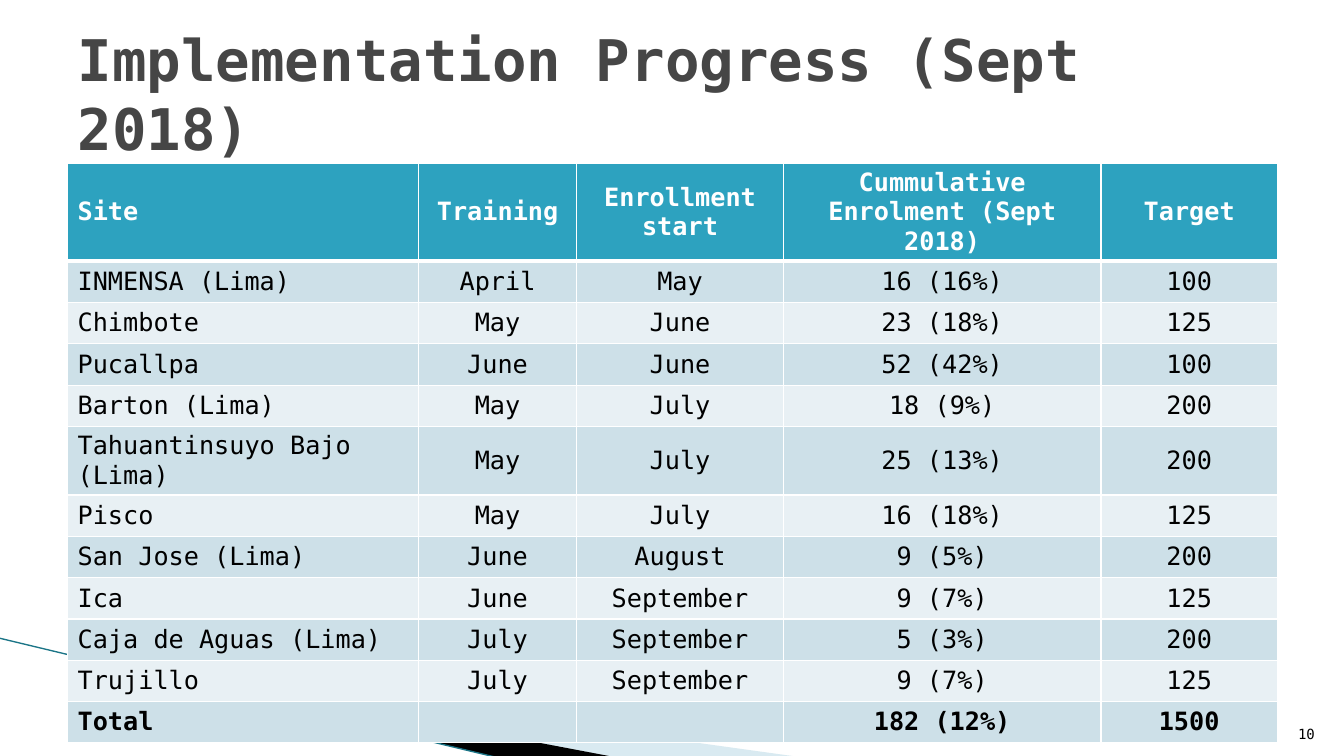
from lxml import etree
from pptx import Presentation
from pptx.dml.color import RGBColor
from pptx.enum.shapes import MSO_CONNECTOR
from pptx.enum.text import MSO_ANCHOR, MSO_AUTO_SIZE, PP_ALIGN
from pptx.oxml.ns import qn
from pptx.util import Inches, Pt

STRAIGHT = MSO_CONNECTOR.STRAIGHT
MIDDLE, BOTTOM = MSO_ANCHOR.MIDDLE, MSO_ANCHOR.BOTTOM
LEFT, CENTER, RIGHT = PP_ALIGN.LEFT, PP_ALIGN.CENTER, PP_ALIGN.RIGHT
NO_AUTOFIT = MSO_AUTO_SIZE.NONE

FONT = "DejaVu Sans Mono"
WHITE = RGBColor(0xFF, 0xFF, 0xFF)
BLACK = RGBColor(0, 0, 0)
TITLE_GREY = RGBColor(0x46, 0x46, 0x46)
HEADER_TEAL = RGBColor(0x2D, 0xA2, 0xBF)
BAND_DARK = RGBColor(0xCD, 0xE0, 0xE8)
BAND_LIGHT = RGBColor(0xE8, 0xF0, 0xF4)
SWOOSH_BLUE = RGBColor(0xA0, 0xCB, 0xDC)
SWOOSH_LINE = RGBColor(0x1B, 0x75, 0x87)

COLUMN_WIDTHS = [3.48, 1.57, 2.05, 3.15, 1.75]
ROW_HEIGHT = 0.41
PROGRESS = [
    ("Site", "Training", "Enrollment start", "Cummulative Enrolment (Sept 2018)", "Target"),
    ("INMENSA (Lima)", "April", "May", "16 (16%)", "100"),
    ("Chimbote", "May", "June", "23 (18%)", "125"),
    ("Pucallpa", "June", "June", "52 (42%)", "100"),
    ("Barton (Lima)", "May", "July", "18 (9%)", "200"),
    ("Tahuantinsuyo Bajo (Lima)", "May", "July", "25 (13%)", "200"),
    ("Pisco", "May", "July", "16 (18%)", "125"),
    ("San Jose (Lima)", "June", "August", "9 (5%)", "200"),
    ("Ica", "June", "September", "9 (7%)", "125"),
    ("Caja de Aguas (Lima)", "July", "September", "5 (3%)", "200"),
    ("Trujillo", "July", "September", "9 (7%)", "125"),
    ("Total", "", "", "182 (12%)", "1500"),
]


def style_paragraph(paragraph, size, color, bold=False, align=LEFT):
    paragraph.alignment = align
    font = paragraph.font
    font.name, font.size, font.bold = FONT, Pt(size), bold
    font.color.rgb = color


def add_swoosh(slide, left, top, offsets, color, opacity=100):
    points = [(Inches(left + dx), Inches(top + dy)) for dx, dy in offsets]
    builder = slide.shapes.build_freeform(*points[0], scale=1.0)
    builder.add_line_segments(points[1:], close=True)
    swoosh = builder.convert_to_shape()
    swoosh.shadow.inherit = False
    swoosh.line.fill.background()
    swoosh.fill.solid()
    swoosh.fill.fore_color.rgb = color
    if opacity < 100:
        tint = swoosh.fill._xPr.find(qn("a:solidFill"))[0]
        etree.SubElement(tint, qn("a:alpha"), val=str(opacity * 1000))


def add_corner_decoration(slide, left, top):
    add_swoosh(slide, left + 0.74, top + 0.17,
               [(0, 0.01), (7.2, 1.01), (5.35, 1.01), (0, 0)], SWOOSH_BLUE, 40)
    add_swoosh(slide, left + 0.72, top + 0.16,
               [(0, 0), (5.38, 1.02), (4.25, 1.03), (0.01, 0.01)], BLACK)
    edge = slide.shapes.add_connector(
        STRAIGHT, Inches(left), Inches(top), Inches(left + 4.96), Inches(top + 1.19))
    edge.line.color.rgb = SWOOSH_LINE
    edge.line.width = Pt(0.95)
    etree.SubElement(edge._element.spPr, qn("a:effectLst"))


def add_title(slide, left, top, width, height):
    title = slide.shapes.title
    title.left, title.top = Inches(left), Inches(top)
    title.width, title.height = Inches(width), Inches(height)
    frame = title.text_frame
    frame.text = "Implementation Progress (Sept 2018)"
    frame.word_wrap = True
    frame.auto_size = NO_AUTOFIT
    frame.vertical_anchor = MIDDLE
    style_paragraph(frame.paragraphs[0], 41, TITLE_GREY, bold=True)


def set_borders(cell, bottom_width):
    properties = cell._tc.get_or_add_tcPr()
    for side, width in (("L", 1), ("R", 1), ("T", 1), ("B", bottom_width)):
        border = etree.SubElement(properties, qn(f"a:ln{side}"), w=str(Pt(width)))
        fill = etree.SubElement(border, qn("a:solidFill"))
        etree.SubElement(fill, qn("a:srgbClr"), val=str(WHITE))


def add_progress_table(slide, left, top, width):
    height = ROW_HEIGHT * len(PROGRESS)
    table = slide.shapes.add_table(
        len(PROGRESS), len(COLUMN_WIDTHS),
        Inches(left), Inches(top), Inches(width), Inches(height)).table
    for column, column_width in zip(table.columns, COLUMN_WIDTHS):
        column.width = Inches(column_width)
    last = len(PROGRESS) - 1
    for r, site in enumerate(PROGRESS):
        table.rows[r].height = Inches(ROW_HEIGHT)
        header = r == 0
        band = HEADER_TEAL if header else BAND_DARK if r % 2 else BAND_LIGHT
        for c, value in enumerate(site):
            cell = table.cell(r, c)
            cell.text = value
            cell.vertical_anchor = MIDDLE
            set_borders(cell, 3 if header else 1)
            cell.fill.solid()
            cell.fill.fore_color.rgb = band
            style_paragraph(cell.text_frame.paragraphs[0], 18,
                            WHITE if header else BLACK,
                            bold=r in (0, last), align=CENTER if c else LEFT)


def add_page_number(slide, left, top, width, height):
    frame = slide.shapes.add_textbox(
        Inches(left), Inches(top), Inches(width), Inches(height)).text_frame
    frame.text = "10"
    frame.word_wrap = True
    frame.vertical_anchor = BOTTOM
    style_paragraph(frame.paragraphs[0], 10, BLACK, align=RIGHT)


def main():
    deck = Presentation()
    deck.slide_width, deck.slide_height = Inches(13.33), Inches(7.5)
    slide = deck.slides.add_slide(deck.slide_layouts[5])
    add_corner_decoration(slide, -0.01, 6.33)
    add_progress_table(slide, 0.67, 1.62, 12)
    add_page_number(slide, 12.61, 7.01, 0.53, 0.4)
    add_title(slide, 0.67, 0.3, 12, 1.25)
    deck.save("out.pptx")


if __name__ == "__main__":
    main()
